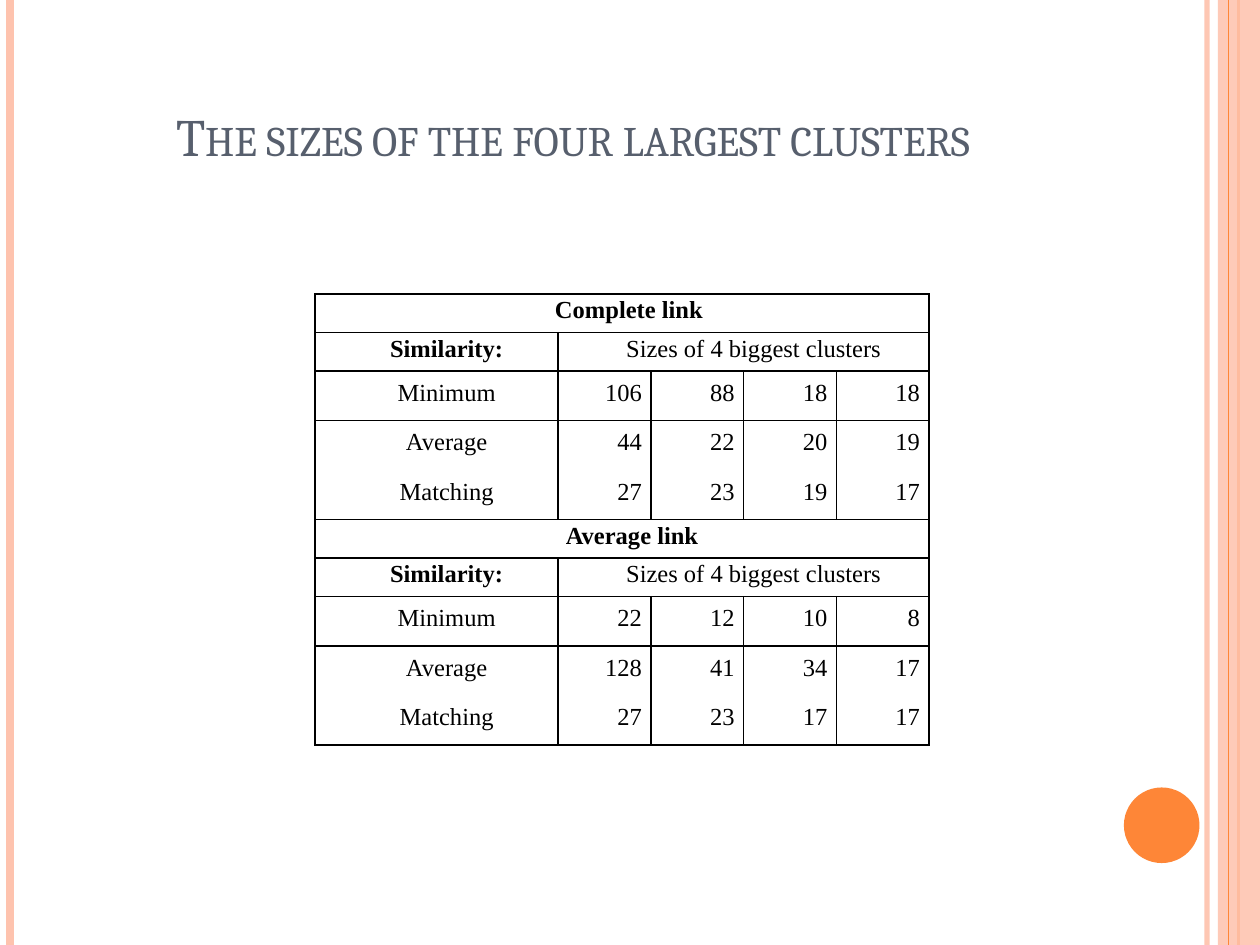
from dataclasses import dataclass
from typing import Any, Optional

from lxml import etree
from pptx import Presentation
from pptx.dml.color import RGBColor
from pptx.enum.shapes import MSO_CONNECTOR, MSO_SHAPE
from pptx.enum.text import MSO_ANCHOR, PP_ALIGN
from pptx.oxml.ns import qn
from pptx.util import Pt

LINE = MSO_CONNECTOR.STRAIGHT
RECT, OVAL = MSO_SHAPE.RECTANGLE, MSO_SHAPE.OVAL
MIDDLE = MSO_ANCHOR.MIDDLE
CENTER, RIGHT = PP_ALIGN.CENTER, PP_ALIGN.RIGHT
PLAIN = "{2D5ABB26-0587-4C30-8999-92F81FD0307C}"  # table style without grid
WIDTH, HEIGHT = 720, 540


@dataclass(frozen=True)
class Theme:
    peach: str = "FEC3AE"
    orange: str = "FE8637"
    slate: str = "575F6D"
    ink: str = "000000"
    head: str = "Cambria"
    body: str = "Times New Roman"
    title: int = 30
    text: int = 14


@dataclass(frozen=True)
class Stripe:
    x: float
    width: float
    color: str
    alpha: Optional[int] = None


@dataclass(frozen=True)
class Block:
    color: str
    kind: Any
    box: tuple[float, float, float, float]
    alpha: Optional[int] = None


@dataclass(frozen=True)
class Link:
    name: str
    sizes: dict[str, tuple[int, ...]]


THEME = Theme()
ART = (
    Stripe(689.76, 3, THEME.peach, 93),
    Stripe(5.76, 4.5, THEME.peach),
    Stripe(707.76, 1.5, THEME.orange),
    Block(THEME.peach, RECT, (696, 0, 24, HEIGHT), 87),
    Stripe(702, 0.75, THEME.orange),
    Block(THEME.orange, OVAL, (642.24, 450, 43.2, 43.2)),
)
LINKS = (
    Link("Complete link ", {
        "Minimum": (106, 88, 18, 18),
        "Average": (44, 22, 20, 19),
        "Matching": (27, 23, 19, 17),
    }),
    Link("Average link", {
        "Minimum": (22, 12, 10, 8),
        "Average": (128, 41, 34, 17),
        "Matching": (27, 23, 17, 17),
    }),
)
COLS = (139, 53, 53, 53, 53)
ROWS = (22, 22, 28.3, 28.3, 28.3) * len(LINKS)
SPACED = {"space_before": Pt(3), "space_after": Pt(3)}


def assign(item: Any, values: dict[str, Any]) -> None:
    for key, value in values.items():
        setattr(item, key, value)


def style(font: Any, name: str, size: float, color: str, bold: bool = False) -> None:
    assign(font, {"name": name, "size": Pt(size), "bold": bold})
    font.color.rgb = RGBColor.from_string(color)


def fade(fill: Any, node: Any, color: str, alpha: Optional[int]) -> None:
    """Fill solidly, at alpha percent opacity when given."""
    fill.solid()
    fill.fore_color.rgb = RGBColor.from_string(color)
    if alpha is not None:
        tone = next(node.iter(qn("a:srgbClr")))
        etree.SubElement(tone, qn("a:alpha"), val=str(alpha * 1000))


def draw_stripe(slide: Any, item: Stripe) -> None:
    line = slide.shapes.add_connector(LINE, Pt(item.x), 0, Pt(item.x), Pt(HEIGHT))
    line.line.width = Pt(item.width)
    props = line._element.spPr
    fade(line.line.fill, props, item.color, item.alpha)
    etree.SubElement(props, qn("a:effectLst"))


def draw_block(slide: Any, item: Block) -> None:
    shape = slide.shapes.add_shape(item.kind, *map(Pt, item.box))
    shape.shadow.inherit = False
    fade(shape.fill, shape._element.spPr, item.color, item.alpha)
    shape.line.fill.background()


def draw_title(slide: Any, text: str) -> None:
    title = slide.shapes.title
    box = {"left": 36, "top": 21.6, "width": 588, "height": 111.6}
    assign(title, {key: Pt(size) for key, size in box.items()})
    frame = title.text_frame
    frame.vertical_anchor = MIDDLE
    para = frame.paragraphs[0]
    para.alignment = CENTER
    run = para.add_run()
    run.text = text
    style(run.font, THEME.head, THEME.title, THEME.slate)
    run._r.get_or_add_rPr().set("cap", "small")
    slide.shapes._spTree.append(title._element)


def rule_cell(cell: Any, sides: str) -> None:
    """Draw borders on the sides named by the letters L, R, T and B."""
    props = cell._tc.get_or_add_tcPr()
    for side in "LRTB":
        if side in sides:
            edge = etree.SubElement(props, qn(f"a:ln{side}"), w=str(Pt(1)))
            fill = etree.SubElement(edge, qn("a:solidFill"))
            etree.SubElement(fill, qn("a:srgbClr"), val=THEME.ink)
    cell.fill.background()


def write_cell(cell: Any, text: str, align: Any = CENTER, bold: bool = False) -> None:
    assign(cell, {
        "vertical_anchor": MIDDLE, "margin_left": Pt(5.2),
        "margin_right": Pt(5.2), "margin_top": 0, "margin_bottom": 0,
    })
    para = cell.text_frame.paragraphs[0]
    assign(para, {"alignment": align, "line_spacing": Pt(12)})
    if bold:
        assign(para, SPACED)
    para._p.get_or_add_pPr().set("indent", str(Pt(11.5)))
    run = para.add_run()
    run.text = text
    style(run.font, THEME.body, THEME.text, THEME.ink, bold)


def fill_link(table: Any, top: int, link: Link) -> None:
    last = len(COLS) - 1
    for row, start in ((top, 0), (top + 1, 1)):
        table.cell(row, start).merge(table.cell(row, last))
    write_cell(table.cell(top, 0), link.name, bold=True)
    write_cell(table.cell(top + 1, 0), "Similarity:", bold=True)
    write_cell(table.cell(top + 1, 1), "Sizes of 4 biggest clusters")
    for row, (name, sizes) in enumerate(link.sizes.items(), top + 2):
        write_cell(table.cell(row, 0), name)
        for col, size in enumerate(sizes, 1):
            write_cell(table.cell(row, col), str(size), RIGHT)


def draw_table(slide: Any) -> None:
    frame = slide.shapes.add_table(
        len(ROWS), len(COLS), Pt(180), Pt(168), Pt(sum(COLS)), Pt(sum(ROWS)))
    table = frame.table
    assign(table, {"first_row": False, "horz_banding": False})
    table._tbl.tblPr.find(qn("a:tableStyleId")).text = PLAIN
    for col, width in zip(table.columns, COLS):
        col.width = Pt(width)
    for row, height in zip(table.rows, ROWS):
        row.height = Pt(height)
    step = len(ROWS) // len(LINKS)
    for index, link in enumerate(LINKS):
        fill_link(table, index * step, link)
    edges = ("TB", "TB", "LRT", "LR", "LRB")
    for index, row in enumerate(table.rows):
        sides = edges[index % step]
        for col, cell in enumerate(row.cells):
            left = "" if cell.is_spanned else "L"
            right = "R" if col == len(COLS) - 1 or not cell.is_spanned else ""
            rule_cell(cell, sides.strip("LR") + left + right if sides == "TB" else sides)


def main() -> None:
    deck = Presentation()
    assign(deck, {"slide_width": Pt(WIDTH), "slide_height": Pt(HEIGHT)})
    slide = deck.slides.add_slide(deck.slide_layouts.get_by_name("Title Only"))
    for item in ART:
        if isinstance(item, Stripe):
            draw_stripe(slide, item)
        else:
            draw_block(slide, item)
    draw_title(slide, "The sizes of the four largest clusters ")
    draw_table(slide)
    deck.save("out.pptx")


if __name__ == "__main__":
    main()
